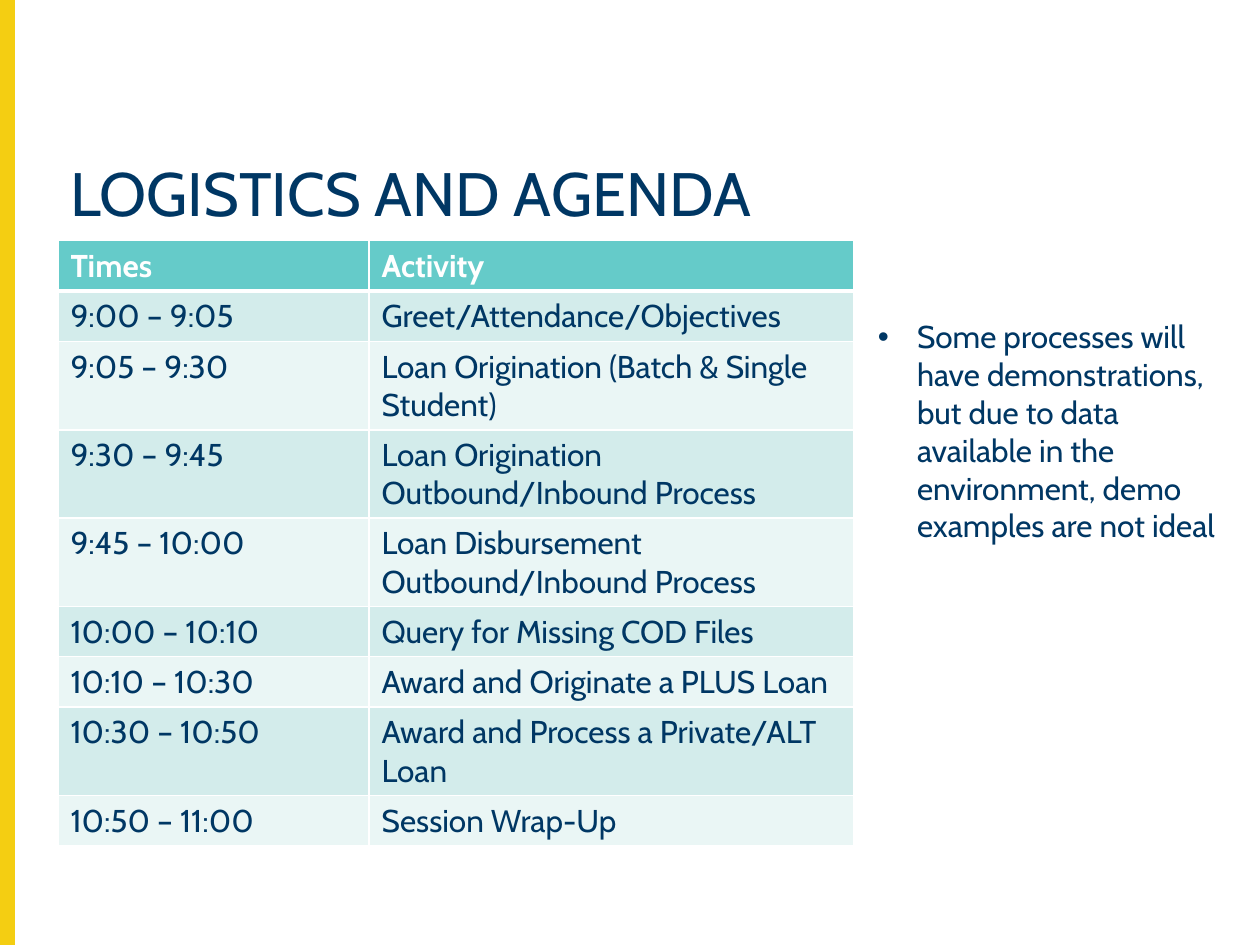
from typing import NamedTuple

from lxml import etree
from pptx import Presentation
from pptx import util as u
from pptx.dml.color import RGBColor
from pptx.enum import shapes, text
from pptx.oxml import ns

FONT = "Cabin"
COLORS = {
    "accent": "F4CE12",
    "navy": "003764",
    "header": "65CBC9",
    "band_dark": "D3ECEB",
    "band_light": "EAF6F5",
    "white": "FFFFFF",
}


class Session(NamedTuple):
    times: str
    activity: str


HEADER = Session("Times", "Activity")
AGENDA = [
    Session("9:00 – 9:05", "Greet/Attendance/Objectives"),
    Session("9:05 – 9:30", "Loan Origination (Batch & Single Student)"),
    Session("9:30 – 9:45", "Loan Origination Outbound/Inbound Process"),
    Session("9:45 – 10:00", "Loan Disbursement Outbound/Inbound Process"),
    Session("10:00 – 10:10", "Query for Missing COD Files"),
    Session("10:10 – 10:30", "Award and Originate a PLUS Loan"),
    Session("10:30 – 10:50", "Award and Process a Private/ALT Loan"),
    Session("10:50 – 11:00", "Session Wrap-Up"),
]


def rgb(name: str) -> RGBColor:
    return RGBColor.from_string(COLORS[name])


def write(frame, content: str, *, size: float = 18, color: str = "navy",
          bold: bool = False, line_spacing: float | None = None):
    """Put one formatted paragraph in a text frame and return it."""
    frame.word_wrap = True
    paragraph = frame.paragraphs[0]
    if line_spacing:
        paragraph.line_spacing = line_spacing
    run = paragraph.add_run()
    run.text = content
    run.font.name = FONT
    run.font.size = u.Pt(size)
    run.font.bold = bold
    run.font.color.rgb = rgb(color)
    return paragraph


def add_text_frame(slide, left: float, top: float, width: float, height: float):
    shape = slide.shapes.add_textbox(
        u.Inches(left), u.Inches(top), u.Inches(width), u.Inches(height))
    shape.text_frame.vertical_anchor = text.MSO_ANCHOR.TOP
    return shape.text_frame


def add_bullet(paragraph, indent: float) -> None:
    properties = paragraph._p.get_or_add_pPr()
    properties.set("marL", str(u.Inches(indent)))
    properties.set("indent", str(-u.Inches(indent)))
    etree.SubElement(properties, ns.qn("a:buFont"), typeface="Arial")
    etree.SubElement(properties, ns.qn("a:buChar"), char="•")


def set_borders(cell, **widths: float) -> None:
    """Draw white cell borders; keywords L, R, T and B give points."""
    properties = cell._tc.get_or_add_tcPr()
    for position, (side, width) in enumerate(widths.items()):
        line = etree.Element(ns.qn(f"a:ln{side}"), w=str(u.Pt(width)))
        fill = etree.SubElement(line, ns.qn("a:solidFill"))
        etree.SubElement(fill, ns.qn("a:srgbClr"), val=COLORS["white"])
        properties.insert(position, line)


def add_agenda(slide) -> None:
    rows = [HEADER, *AGENDA]
    row_height = u.Inches(0.37)
    table = slide.shapes.add_table(
        len(rows), 2, u.Inches(0.46), u.Inches(1.91),
        u.Inches(6.32), row_height * len(rows)).table
    for column, width in zip(table.columns, (2.47, 3.85)):
        column.width = u.Inches(width)
    for index, session in enumerate(rows):
        table.rows[index].height = row_height
        is_header = index == 0
        band = "band_dark" if index % 2 else "band_light"
        for cell, content in zip(table.rows[index].cells, session):
            cell.fill.solid()
            cell.fill.fore_color.rgb = rgb("header" if is_header else band)
            set_borders(cell, L=1, R=1, T=3 if index == 1 else 1,
                        B=3 if is_header else 1)
            write(cell.text_frame, content, bold=is_header,
                  color="white" if is_header else "navy")


def main() -> None:
    presentation = Presentation()
    presentation.slide_width = u.Inches(10)
    presentation.slide_height = u.Inches(7.5)
    slide = presentation.slides.add_slide(presentation.slide_layouts[6])

    # Accent bar on the left edge
    bar = slide.shapes.add_shape(
        shapes.MSO_SHAPE.RECTANGLE, 0, 0, u.Inches(0.11), u.Inches(7.5))
    bar.shadow.inherit = False
    bar.fill.solid()
    bar.fill.fore_color.rgb = rgb("accent")
    bar.line.color.rgb = rgb("accent")
    bar.line.width = u.Pt(1)

    # Title
    write(add_text_frame(slide, 0.46, 1.25, 9.33, 0.79),
          "LOGISTICS AND AGENDA", size=35, line_spacing=0.9)

    # Agenda table
    add_agenda(slide)

    # Side note
    note = write(
        add_text_frame(slide, 6.87, 2.47, 3.04, 1.92),
        "Some processes will have demonstrations, but due to data available "
        "in the environment, demo examples are not ideal")
    add_bullet(note, 0.31)

    presentation.save("out.pptx")


if __name__ == "__main__":
    main()
